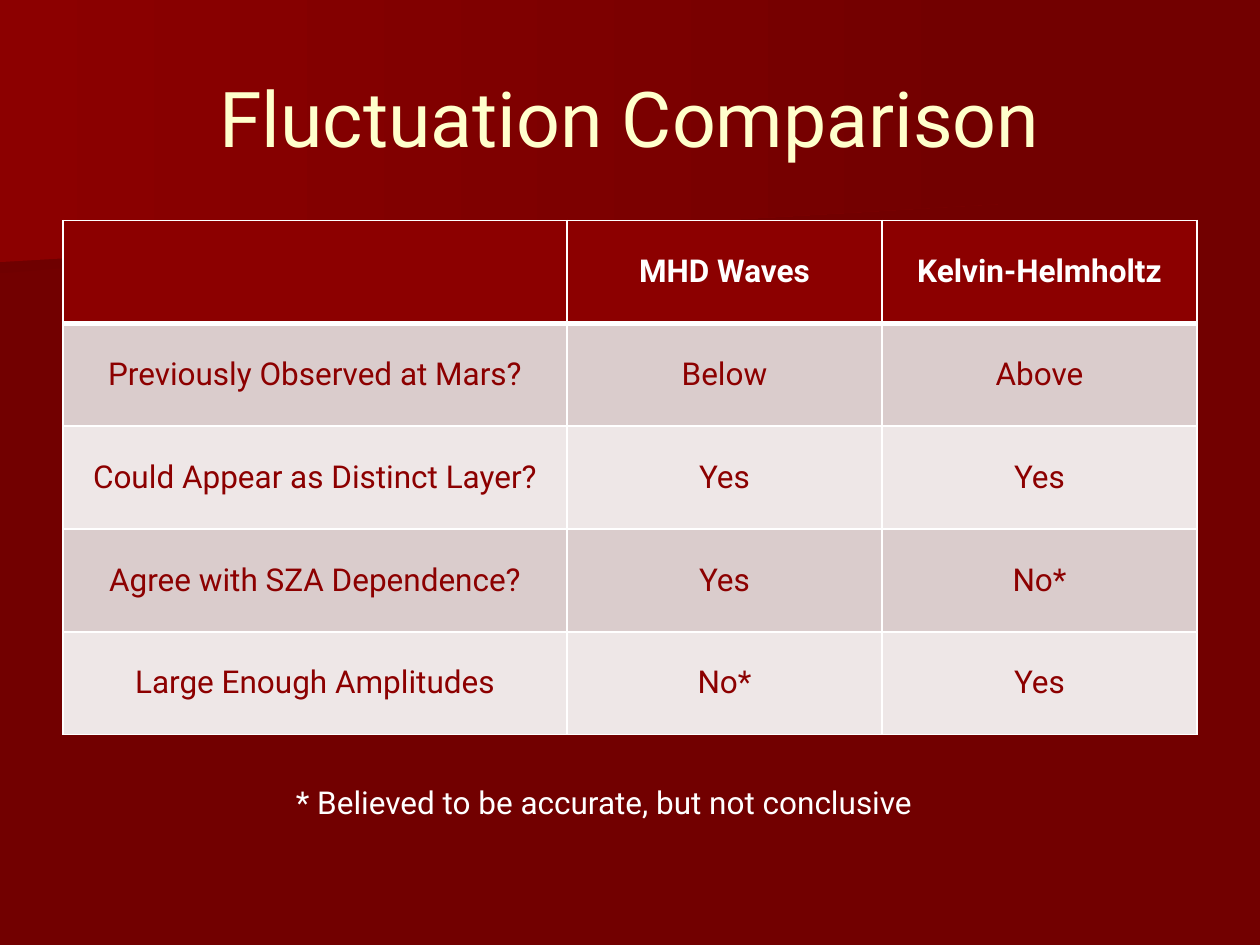
from lxml import etree
from pptx import Presentation
from pptx import util as u
from pptx.dml import color
from pptx.enum import text
from pptx.oxml import ns

UNIT = 0.25
CENTER, LEFT = text.PP_ALIGN.CENTER, text.PP_ALIGN.LEFT
MIDDLE, TOP = text.MSO_ANCHOR.MIDDLE, text.MSO_ANCHOR.TOP
WHITE, CREAM, RED, DARK, DEEP = "FFFFFF", "FFFFCC", "8C0000", "720000", "6F0000"
BANDS = ("DACCCC", "EEE7E7")

HEADS = ["", "MHD Waves", "Kelvin-Helmholtz"]
ROWS = [
    ["Previously Observed at Mars?", "Below", "Above"],
    ["Could Appear as Distinct Layer?", "Yes", "Yes"],
    ["Agree with SZA Dependence?", "Yes", "No*"],
    ["Large Enough Amplitudes", "No*", "Yes"],
]


def rgb(value):
    return color.RGBColor.from_string(value)


def grid(n):
    return u.Inches(n * UNIT)


class Deck:
    """Holds the style and the current slide on a 40 by 30 grid."""

    def __init__(self, font, background):
        self.font = font
        self.prs = Presentation()
        self.prs.slide_width, self.prs.slide_height = grid(40), grid(30)
        self.s = self.prs.slides.add_slide(self.prs.slide_layouts[6])
        fill = self.s.background.fill
        fill.solid()
        fill.fore_color.rgb = rgb(background)

    def words(self, tf, content, ink, size=18, bold=False, align=CENTER):
        p = tf.paragraphs[0]
        p.alignment = align
        if not content:
            return
        r = p.add_run()
        r.text = content
        style = {"name": self.font, "size": u.Pt(size), "bold": bold}
        for key, value in style.items():
            setattr(r.font, key, value)
        r.font.color.rgb = rgb(ink)

    def label(self, box, content, ink, anchor=TOP, **style):
        tf = self.s.shapes.add_textbox(*map(grid, box)).text_frame
        for key, value in {"word_wrap": True, "vertical_anchor": anchor}.items():
            setattr(tf, key, value)
        self.words(tf, content, ink, **style)

    def sheet(self, points, start, end):
        points = [(grid(x), grid(y)) for x, y in points]
        fb = self.s.shapes.build_freeform(*points[0])
        fb.add_line_segments(points[1:], close=True)
        sp = fb.convert_to_shape()
        sp.shadow.inherit = False
        sp.line.fill.background()
        sp.fill.gradient()
        sp.fill.gradient_angle = 0
        for stop, value in zip(sp.fill.gradient_stops, (start, end)):
            stop.color.rgb = rgb(value)

    def borders(self, cell, top, bottom):
        tc_pr = cell._tc.get_or_add_tcPr()
        for side, width in {"L": 1, "R": 1, "T": top, "B": bottom}.items():
            ln = etree.SubElement(tc_pr, ns.qn(f"a:ln{side}"), w=str(u.Pt(width)))
            fill = etree.SubElement(ln, ns.qn("a:solidFill"))
            etree.SubElement(fill, ns.qn("a:srgbClr"), val=WHITE)

    def cell(self, cell, content, fill, ink, bold=False, top=1, bottom=1):
        self.borders(cell, top, bottom)
        cell.fill.solid()
        cell.fill.fore_color.rgb = rgb(fill)
        cell.vertical_anchor = MIDDLE
        self.words(cell.text_frame, content, ink, bold=bold)

    def table(self, box, widths, heads, rows):
        shape = self.s.shapes.add_table(len(rows) + 1, len(heads), *map(grid, box))
        table = shape.table
        for column, width in zip(table.columns, widths):
            column.width = grid(width)
        for j, content in enumerate(heads):
            self.cell(table.cell(0, j), content, RED, WHITE, bold=True, bottom=3)
        for i, row in enumerate(rows):
            for j, content in enumerate(row):
                self.cell(table.cell(i + 1, j), content, BANDS[i % 2], RED,
                          top=1 if i else 3)


def main():
    deck = Deck("Roboto", DARK)
    deck.sheet([(31.12, 6.12), (0, 8.68), (0, 4.04), (31.16, 4.04), (31.12, 5.12)],
               DEEP, DARK)
    deck.sheet([(31.68, 6.48), (0, 8.32), (0, 0), (31.68, 0)], RED, DARK)
    deck.label((2, 1.2, 36, 5), "Fluctuation Comparison", CREAM, MIDDLE, size=44)
    deck.table((2, 7, 36, 16.33), (16, 10, 10), HEADS, ROWS)
    deck.label((9, 24.67, 23.33, 1.6),
               "* Believed to be accurate, but not conclusive", WHITE, align=LEFT)
    deck.prs.save("out.pptx")


if __name__ == "__main__":
    main()
